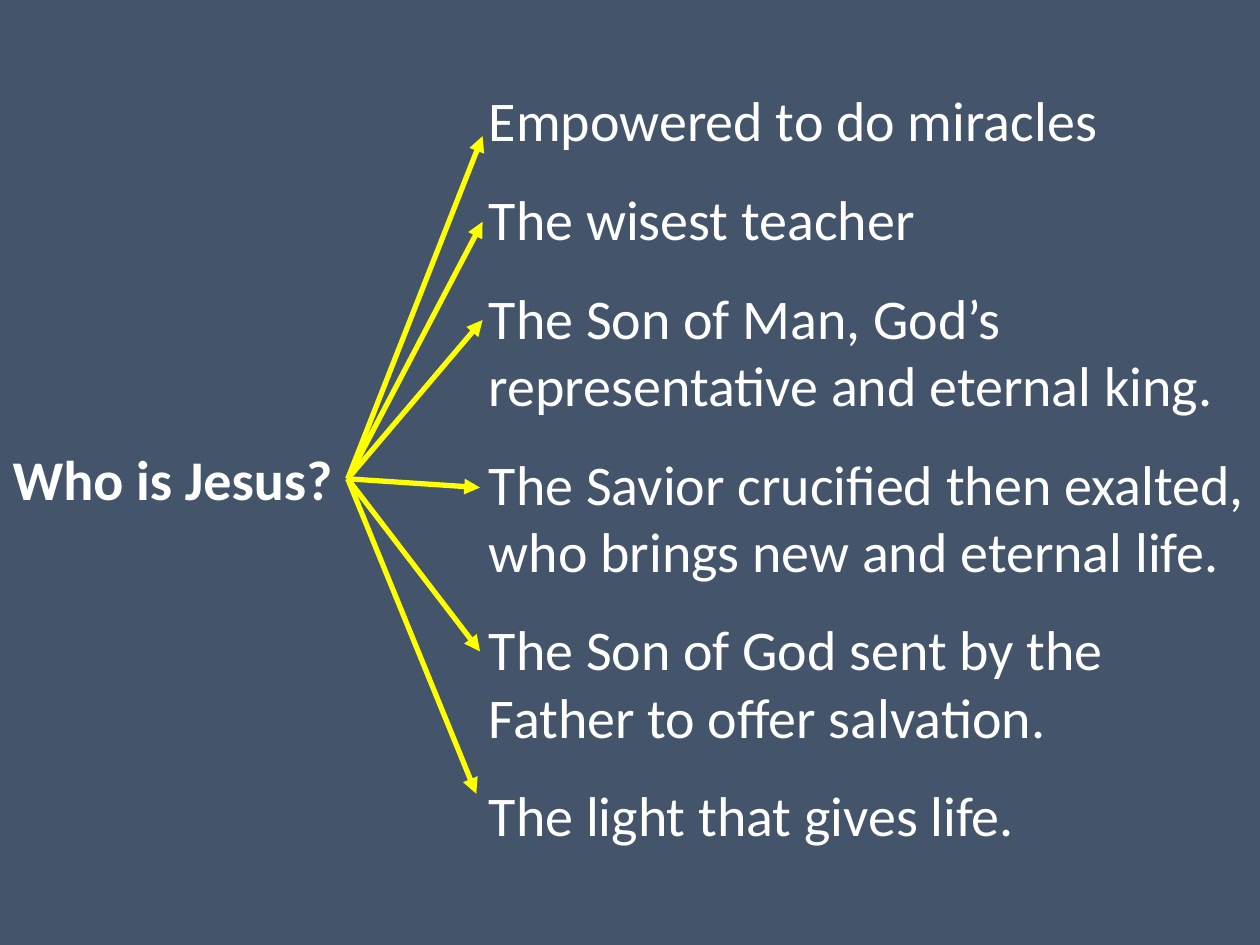
from lxml import etree
from pptx import Presentation
from pptx.dml.color import RGBColor
from pptx.enum.shapes import MSO_CONNECTOR
from pptx.enum.text import MSO_ANCHOR, MSO_AUTO_SIZE, PP_ALIGN
from pptx.oxml.ns import qn
from pptx.util import Inches, Pt

STRAIGHT = MSO_CONNECTOR.STRAIGHT
TOP = MSO_ANCHOR.TOP
NO_FIT = MSO_AUTO_SIZE.NONE
LEFT = PP_ALIGN.LEFT

SLATE = RGBColor(0x44, 0x54, 0x6A)
WHITE = RGBColor(0xFF, 0xFF, 0xFF)
YELLOW = RGBColor(0xFF, 0xFF, 0x00)

QUESTION = "Who is Jesus?"
ANSWERS = [
    "Empowered to do miracles",
    "The wisest teacher",
    "The Son of Man, God’s representative and eternal king.",
    "The Savior crucified then exalted, who brings new and eternal life.",
    "The Son of God sent by the Father to offer salvation.",
    "The light that gives life.",
]
ARROW_TIPS = [(3.83, 1.08), (3.83, 1.76), (3.83, 2.54),
              (3.81, 3.87), (3.81, 5.17), (3.78, 6.3)]


class SlideBuilder:
    """Draws styled placeholders and arrows on one slide."""

    font = "Calibri"
    size = Pt(32)

    def __init__(self, slide):
        self.slide = slide
        fill = slide.background.fill
        fill.solid()
        fill.fore_color.rgb = SLATE

    def fill_placeholder(self, sp, box, lines, bold=False, space_before=0):
        sp.left, sp.top, sp.width, sp.height = map(Inches, box)
        tf = sp.text_frame
        tf.text = "\n".join(lines)
        tf.word_wrap = True
        tf.auto_size = NO_FIT
        tf.vertical_anchor = TOP
        for p in tf.paragraphs:
            p.alignment = LEFT
            p.space_before = Pt(space_before)
            pPr = p._p.get_or_add_pPr()
            pPr.set("marL", "0")
            pPr.set("indent", "0")
            etree.SubElement(pPr, qn("a:buNone"))
            for r in p.runs:
                r.font.name = self.font
                r.font.size = self.size
                r.font.bold = bold
                r.font.color.rgb = WHITE
        return sp

    def arrow_from(self, sp, x, y):
        line = self.slide.shapes.add_connector(
            STRAIGHT, sp.left + sp.width, sp.top + sp.height // 2, Inches(x), Inches(y))
        line.begin_connect(sp, 3)
        line.line.color.rgb = YELLOW
        line.line.width = Pt(3)
        etree.SubElement(line.line._get_or_add_ln(), qn("a:tailEnd"), type="triangle")
        etree.SubElement(line._element.spPr, qn("a:effectLst"))


def main():
    prs = Presentation()
    prs.slide_width, prs.slide_height = Inches(10), Inches(7.5)
    s = prs.slides.add_slide(prs.slide_layouts[1])
    builder = SlideBuilder(s)
    question = builder.fill_placeholder(
        s.shapes.title, (0, 3.48, 2.76, 0.64), [QUESTION], bold=True)
    builder.fill_placeholder(
        s.placeholders[1], (3.78, 0.63, 6.22, 6.21), ANSWERS, space_before=18)
    for x, y in ARROW_TIPS:
        builder.arrow_from(question, x, y)
    prs.save("out.pptx")


if __name__ == "__main__":
    main()
